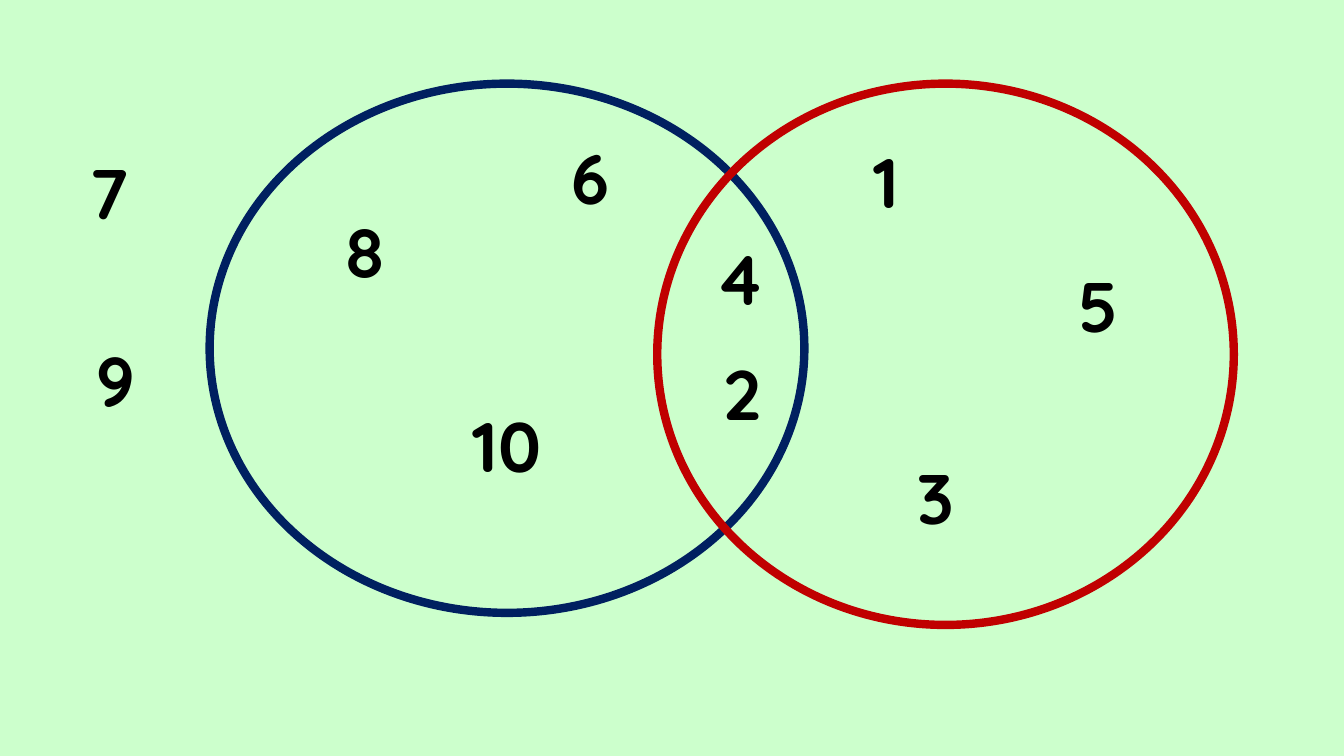
from pptx import Presentation
from pptx import util as u
from pptx.dml.color import RGBColor
from pptx.enum import shapes, text

MINT = RGBColor(0xCC, 0xFF, 0xCC)
NAVY = RGBColor(0x00, 0x20, 0x60)
RED = RGBColor(0xC0, 0x00, 0x00)
BLACK = RGBColor(0x00, 0x00, 0x00)

COLUMNS = 40
ROWS = 22.5
DIGIT_WIDTH = 1.17
NUMBER_PADDING = 0.6
NUMBER_HEIGHT = 2.82

SETS = [
    (NAVY, 6.24, 2.49, 17.7, 15.75),
    (RED, 19.56, 2.49, 17.16, 16.11),
]
NUMBERS = {
    1: (25.71, 3.99),
    2: (21.24, 10.29),
    3: (27, 13.38),
    4: (21, 6.87),
    5: (31.8, 7.68),
    6: (16.71, 3.87),
    7: (2.37, 4.29),
    8: (9.96, 6.06),
    9: (2.58, 9.9),
    10: (13.77, 11.82),
}


def grid_area(box, column, row, columns, rows):
    left, top, width, height = box
    cell_width, cell_height = width / COLUMNS, height / ROWS
    return (
        round(left + column * cell_width),
        round(top + row * cell_height),
        round(columns * cell_width),
        round(rows * cell_height),
    )


def draw_set(slide, area, color):
    ring = slide.shapes.add_shape(shapes.MSO_SHAPE.OVAL, *area)
    ring.shadow.inherit = False
    ring.fill.background()
    ring.line.color.rgb = color
    ring.line.width = u.Pt(6)


def write_number(slide, area, number):
    label = slide.shapes.add_textbox(*area).text_frame
    label.word_wrap = False
    label.auto_size = text.MSO_AUTO_SIZE.SHAPE_TO_FIT_TEXT
    label.text = str(number)
    font = label.paragraphs[0].runs[0].font
    font.name = "Quicksand"
    font.size = u.Pt(50)
    font.bold = True
    font.color.rgb = BLACK


def draw_venn(slide, box):
    for color, *place in SETS:
        draw_set(slide, grid_area(box, *place), color)
    for number, (column, row) in NUMBERS.items():
        columns = NUMBER_PADDING + DIGIT_WIDTH * len(str(number))
        area = grid_area(box, column, row, columns, NUMBER_HEIGHT)
        write_number(slide, area, number)


def main():
    deck = Presentation()
    deck.slide_width = u.Inches(13.33)
    deck.slide_height = u.Inches(7.5)
    slide = deck.slides.add_slide(deck.slide_layouts[6])
    slide.background.fill.solid()
    slide.background.fill.fore_color.rgb = MINT
    draw_venn(slide, (0, 0, deck.slide_width, deck.slide_height))
    deck.save("out.pptx")


if __name__ == "__main__":
    main()
